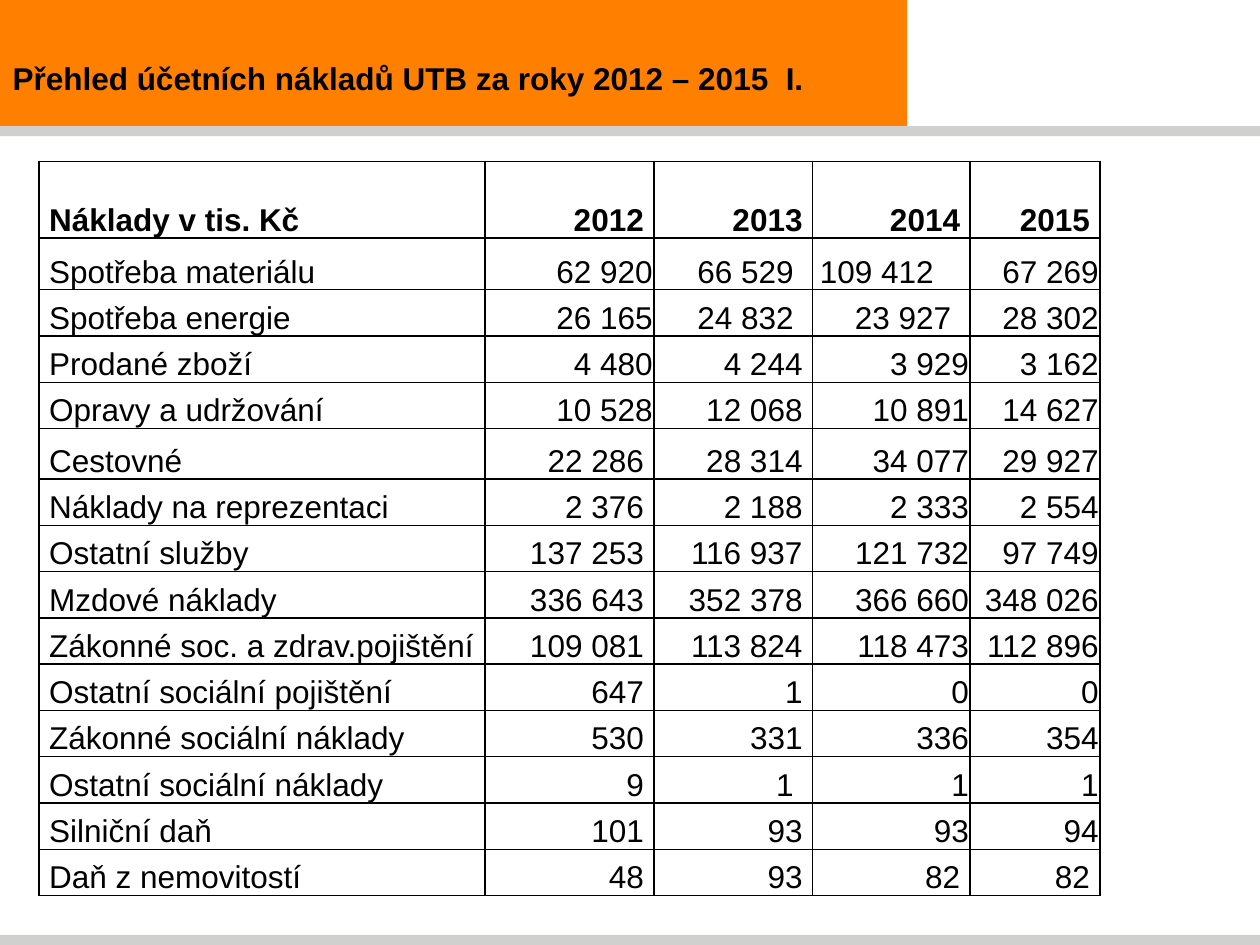
from lxml import etree
from pptx import Presentation
from pptx.dml.color import RGBColor
from pptx.enum import shapes, text
from pptx.oxml.ns import qn
from pptx.util import Inches, Pt

THEME = {
    "font": "Arial", "size": 18, "text": "000000", "border": "000000",
    "border_width": 1, "orange": "FF8001", "gray": "D0D0CE",
}
TITLE = "Přehled účetních nákladů UTB za roky 2012 – 2015  I."
BANDS = [
    (0, 0, 7.2, 1, "orange"),
    (0, 7.42, 10, 0.08, "gray"),
    (0, 1, 10, 0.08, "gray"),
]
COSTS = [
    ("Náklady v tis. Kč", "2012", "2013", "2014", "2015"),
    ("Spotřeba materiálu", "62 920", "66 529", "109 412", "67 269"),
    ("Spotřeba energie", "26 165", "24 832", "23 927", "28 302"),
    ("Prodané zboží", "4 480", "4 244", "3 929", "3 162"),
    ("Opravy a udržování", "10 528", "12 068", "10 891", "14 627"),
    ("Cestovné", "22 286", "28 314", "34 077", "29 927"),
    ("Náklady na reprezentaci", "2 376", "2 188", "2 333", "2 554"),
    ("Ostatní služby", "137 253", "116 937", "121 732", "97 749"),
    ("Mzdové náklady", "336 643", "352 378", "366 660", "348 026"),
    ("Zákonné soc. a zdrav.pojištění", "109 081", "113 824", "118 473", "112 896"),
    ("Ostatní sociální pojištění", "647", "1", "0", "0"),
    ("Zákonné sociální náklady", "530", "331", "336", "354"),
    ("Ostatní sociální náklady", "9", "1", "1", "1"),
    ("Silniční daň", "101", "93", "93", "94"),
    ("Daň z nemovitostí", "48", "93", "82", "82"),
]
LEFT, TOP, HEIGHT = 0.31, 1.28, 5.83
COL_WIDTHS = [3.54, 1.34, 1.26, 1.25, 1.03]
TALL_ROWS = {0: 0.61, 1: 0.41, 5: 0.4}
FLUSH, PADDED = 0.01, 0.08
LAST = len(COSTS) - 1
RIGHT_INSETS = {(1, 2): 0.15, (2, 2): 0.15, (12, 2): 0.15, (1, 3): 0.29, (2, 3): 0.15}


def right_inset(row, col):
    if col == 0:
        return FLUSH
    padded = row in (0, LAST) or col == 2 or (col == 1 and row > 4)
    return RIGHT_INSETS.get((row, col), PADDED if padded else FLUSH)


def style_text(tf, bold, align):
    for p in tf.paragraphs:
        p.alignment = align
        for r in p.runs:
            r.font.name = THEME["font"]
            r.font.size = Pt(THEME["size"])
            r.font.bold = bold
            r.font.color.rgb = RGBColor.from_string(THEME["text"])


def add_borders(cell):
    tc_pr = cell._tc.get_or_add_tcPr()
    for i, side in enumerate(("lnL", "lnR", "lnT", "lnB")):
        ln = etree.Element(qn(f"a:{side}"), w=str(Pt(THEME["border_width"])))
        fill = etree.SubElement(ln, qn("a:solidFill"))
        etree.SubElement(fill, qn("a:srgbClr"), val=THEME["border"])
        tc_pr.insert(i, ln)


def add_bands(s):
    for x, y, w, h, color in BANDS:
        sp = s.shapes.add_shape(shapes.MSO_SHAPE.RECTANGLE,
                                Inches(x), Inches(y), Inches(w), Inches(h))
        sp.shadow.inherit = False
        sp.fill.solid()
        sp.fill.fore_color.rgb = RGBColor.from_string(THEME[color])
        sp.line.fill.background()


def add_title(s):
    sp = s.shapes.title
    s.shapes._spTree.append(sp._element)
    sp.left, sp.top, sp.width, sp.height = map(Inches, (0, 0.42, 6.79, 0.4))
    tf = sp.text_frame
    tf.text = TITLE
    tf.word_wrap = True
    tf.auto_size = text.MSO_AUTO_SIZE.SHAPE_TO_FIT_TEXT
    tf.vertical_anchor = text.MSO_ANCHOR.TOP
    style_text(tf, True, text.PP_ALIGN.LEFT)


def add_cost_table(s):
    frame = s.shapes.add_table(len(COSTS), len(COL_WIDTHS), Inches(LEFT), Inches(TOP),
                               Inches(sum(COL_WIDTHS)), Inches(HEIGHT))
    table = frame.table
    table.first_row = table.horz_banding = False
    for column, width in zip(table.columns, COL_WIDTHS):
        column.width = Inches(width)
    row_height = (HEIGHT - sum(TALL_ROWS.values())) / (len(COSTS) - len(TALL_ROWS))
    for i, values in enumerate(COSTS):
        table.rows[i].height = Inches(TALL_ROWS.get(i, row_height))
        for j, value in enumerate(values):
            cell = table.cell(i, j)
            cell.text_frame.text = value
            cell.vertical_anchor = text.MSO_ANCHOR.BOTTOM
            cell.margin_left = Inches(FLUSH if j else PADDED)
            cell.margin_right = Inches(right_inset(i, j))
            cell.margin_top, cell.margin_bottom = Inches(0.01), 0
            cell.fill.background()
            add_borders(cell)
            style_text(cell.text_frame, i == 0,
                       text.PP_ALIGN.RIGHT if j else text.PP_ALIGN.LEFT)


def main():
    prs = Presentation()
    prs.slide_width, prs.slide_height = Inches(10), Inches(7.5)
    s = prs.slides.add_slide(prs.slide_layouts[5])
    add_bands(s)
    add_title(s)
    add_cost_table(s)
    prs.save("out.pptx")


if __name__ == "__main__":
    main()
